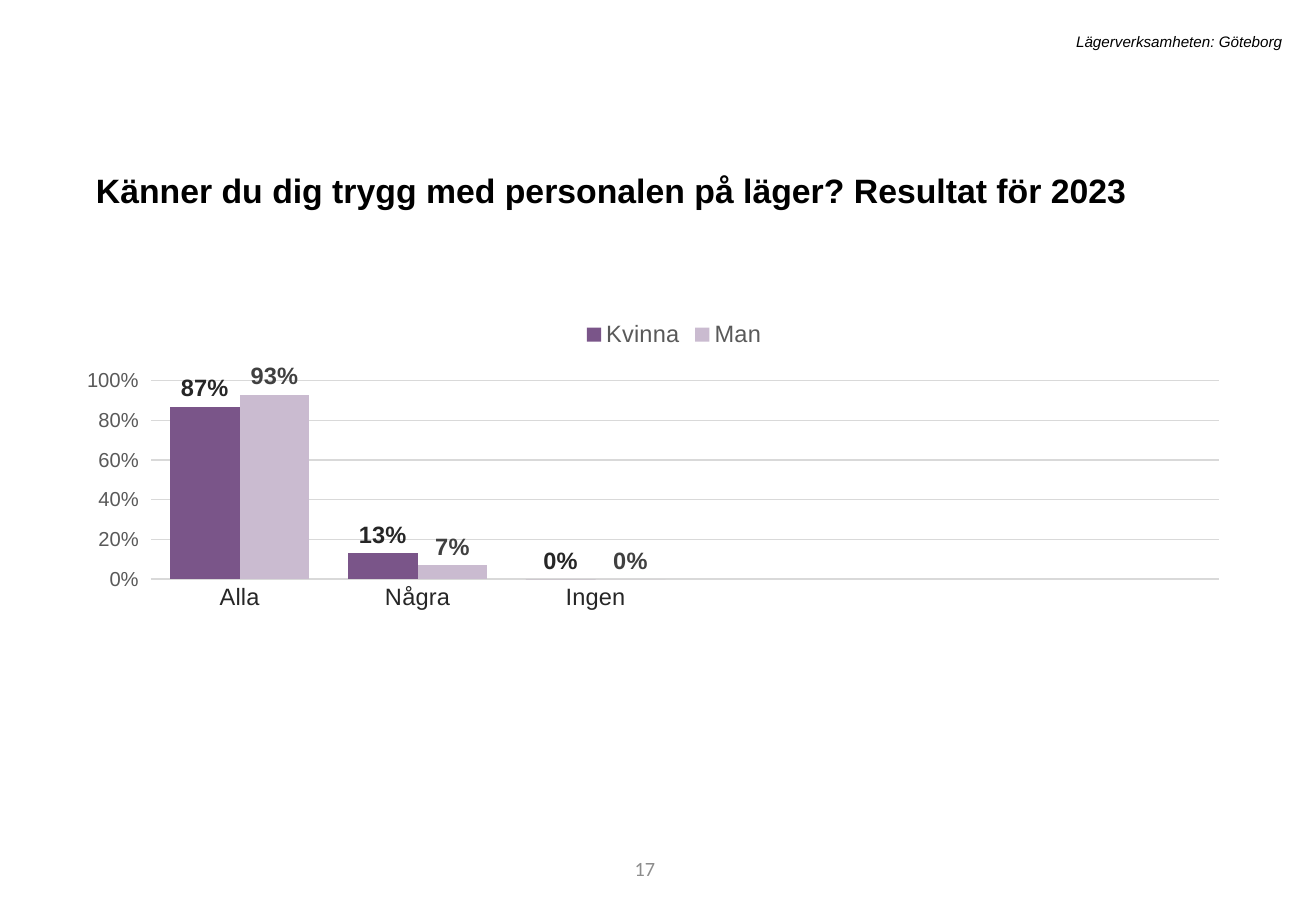
from pptx import Presentation
from pptx.chart.data import CategoryChartData as ChartData
from pptx.dml.color import RGBColor
from pptx.enum.chart import XL_CHART_TYPE as Kind, XL_LABEL_POSITION as Spot
from pptx.enum.chart import XL_LEGEND_POSITION as Side, XL_TICK_MARK as Tick
from pptx.enum.text import MSO_ANCHOR as Anchor, PP_ALIGN as Align
from pptx.oxml import parse_xml
from pptx.oxml.ns import nsdecls, qn
from pptx.util import Pt

SCALE = 7526  # EMU in one px
GREY = "D9D9D9"
CATS = ["Alla", "Några", "Ingen", "", "", ""]
# name, values, fill, label colour
SERIES = [
    ("Kvinna", [0.87, 0.13, 0], "7A5589", "262626"),
    ("Man", [0.93, 0.07, 0], "CABBD0", "404040"),
]


def px(*nums):
    return [n * SCALE for n in nums]


def paint(hue):
    return RGBColor.from_string(hue)


def style(font, size, hue="000000", face="Arial", bold=False, italic=False):
    font.name, font.size = face, Pt(size)
    font.bold, font.italic = bold, italic
    font.color.rgb = paint(hue)


def add_text(slide, box, text, align=Align.LEFT, anchor=Anchor.TOP,
             lead=1, before=0, **look):
    frame = slide.shapes.add_textbox(*px(*box)).text_frame
    frame.word_wrap = True
    frame.vertical_anchor = anchor
    para = frame.paragraphs[0]
    para.alignment = align
    para.line_spacing = lead
    para.space_before = Pt(before)
    run = para.add_run()
    run.text = text
    style(run.font, **look)


def place(node, index, target="", **rect):
    """Give a chart part a fixed place, as fractions of the chart."""
    for old in node.findall(qn("c:layout")):
        node.remove(old)
    goal = f'<c:layoutTarget val="{target}"/>' if target else ""
    modes = "".join(f'<c:{k}Mode val="edge"/>' for k in "xy")
    sizes = "".join(f'<c:{k} val="{v}"/>' for k, v in rect.items())
    node.insert(index, parse_xml(
        f'<c:layout {nsdecls("c")}><c:manualLayout>{goal}{modes}{sizes}'
        '</c:manualLayout></c:layout>'))


def rule(line):
    line.color.rgb = paint(GREY)
    line.width = Pt(0.75)


def add_bars(slide, box):
    data = ChartData(number_format="0%")
    data.categories = CATS
    for name, vals, *_ in SERIES:
        data.add_series(name, vals + [None] * (len(CATS) - len(vals)))
    chart = slide.shapes.add_chart(
        Kind.COLUMN_CLUSTERED, *px(*box), data).chart
    chart.has_title = False
    style(chart.font, 10)

    # Bars and their labels
    plot = chart.plots[0]
    plot.gap_width, plot.overlap = 55, 0
    plot.vary_by_categories = False
    for bars, (_, _, fill, hue) in zip(plot.series, SERIES):
        bars.format.fill.solid()
        bars.format.fill.fore_color.rgb = paint(fill)
        bars.invert_if_negative = False
        tags = bars.data_labels
        tags.show_value = True
        tags.position = Spot.OUTSIDE_END
        tags.number_format, tags.number_format_is_linked = "0%", False
        style(tags.font, 14, hue, bold=True)

    # Axes
    cat, val = chart.category_axis, chart.value_axis
    cat.major_tick_mark = cat.minor_tick_mark = Tick.NONE
    style(cat.tick_labels.font, 14, "262626")
    rule(cat.format.line)
    val.minimum_scale, val.maximum_scale, val.major_unit = 0, 1, 0.2
    val.major_tick_mark, val.minor_tick_mark = Tick.OUTSIDE, Tick.NONE
    val.tick_labels.number_format = "0%"
    val.tick_labels.number_format_is_linked = False
    style(val.tick_labels.font, 12, "595959")
    val.format.line.fill.background()
    rule(val.major_gridlines.format.line)

    # Legend and plot area
    chart.has_legend = True
    key = chart.legend
    key.position = Side.TOP
    key.include_in_layout = False
    style(key.font, 14, "595959")
    root = chart.element
    place(root.find(".//" + qn("c:legend")), 1, x=0.43, y=0.02)
    place(root.find(".//" + qn("c:plotArea")), 0, "inner",
          x=0.054, y=0.154, w=0.937, h=0.413)


def main():
    deck = Presentation()
    deck.slide_width, deck.slide_height = px(1316, 911)
    slide = deck.slides.add_slide(deck.slide_layouts[6])

    # Page number
    add_text(slide, (371, 844, 296, 49), "17", align=Align.RIGHT,
             anchor=Anchor.MIDDLE, size=12, hue="8C8C8C", face="Calibri")
    # Chart
    add_bars(slide, (87, 307, 1142, 480))
    # Title and header
    add_text(slide, (84, 156, 1142, 57),
             "Känner du dig trygg med personalen på läger? Resultat för 2023",
             lead=1.2, before=10, size=20, bold=True)
    add_text(slide, (217, 26, 1077, 30), "Lägerverksamheten: Göteborg",
             align=Align.RIGHT, size=9, italic=True)

    deck.save("out.pptx")


if __name__ == "__main__":
    main()
